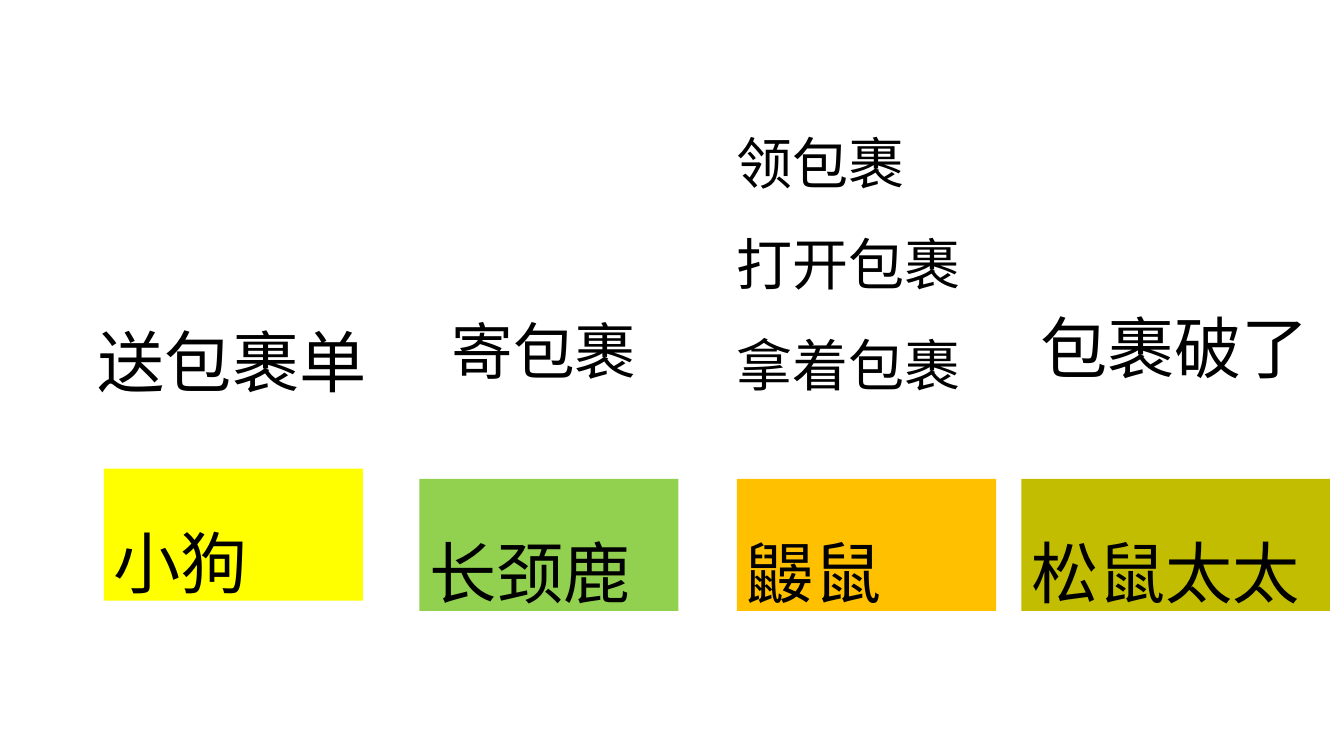
from pptx import Presentation
from pptx.dml.color import RGBColor as RGB
from pptx.enum.shapes import MSO_SHAPE as SHAPE
from pptx.enum.text import MSO_ANCHOR as ANCHOR, PP_ALIGN as ALIGN
from pptx.util import Inches, Pt
from lxml.etree import SubElement
from pptx.oxml.ns import qn

FONT = "Noto Sans CJK SC"
COLORS = {
    "text": "000000",
    "dog": "FFFF00",
    "giraffe": "92D050",
    "mole": "FFC000",
    "squirrel": "C2BD00",
}
SINGLE, WIDE = 1.2, 1.8  # line pitch as a share of the font size
CARD_H, CARD_SIZE = 1.31, 48

# animal, colour, card (left, top, width), actions, action box, size, pitch
COLUMNS = [
    ("小狗", "dog", (1.03, 4.65, 2.57),
     ["送包裹单"], (0.87, 2.65, 3.29, 1.31), 48, WIDE),
    ("长颈鹿", "giraffe", (4.16, 4.75, 2.57),
     ["寄包裹"], (4.38, 2.99, 2.2, 0.84), 44, SINGLE),
    ("鼹鼠", "mole", (7.31, 4.75, 2.57),
     ["领包裹", "打开包裹", "拿着包裹"], (7.21, 0.83, 2.78, 3.13), 40, WIDE),
    ("松鼠太太", "squirrel", (10.13, 4.75, 3.06),
     ["包裹破了"], (10.22, 2.52, 3.05, 1.31), 48, WIDE),
]


def write_lines(sp, lines, size, pitch):
    tf = sp.text_frame
    frame = {
        "word_wrap": True,
        "vertical_anchor": ANCHOR.TOP,
        "margin_top": Inches(0.05 + 0.11 * size / 72),
        "margin_bottom": 0,
    }
    for name, value in frame.items():
        setattr(tf, name, value)
    for i, line in enumerate(lines):
        p = tf.add_paragraph() if i else tf.paragraphs[0]
        p.alignment = ALIGN.LEFT
        p.line_spacing = Pt(size * pitch)
        r = p.add_run()
        r.text = line
        r.font.size = Pt(size)
        r.font.name = FONT
        r.font.color.rgb = RGB.from_string(COLORS["text"])
        SubElement(r.font._element, qn("a:ea"), typeface=FONT)


def add_actions(s, box, lines, size, pitch):
    sp = s.shapes.add_textbox(*map(Inches, box))
    write_lines(sp, lines, size, pitch)


def add_animal_card(s, box, animal, color):
    sp = s.shapes.add_shape(SHAPE.RECTANGLE, *map(Inches, box))
    sp.shadow.inherit = False
    sp.fill.solid()
    sp.fill.fore_color.rgb = RGB.from_string(COLORS[color])
    sp.line.fill.background()
    write_lines(sp, [animal], CARD_SIZE, WIDE)


def main():
    prs = Presentation()
    prs.slide_width, prs.slide_height = Inches(13.33), Inches(7.5)
    s = prs.slides.add_slide(prs.slide_layouts[6])
    for animal, color, card, actions, box, size, pitch in COLUMNS:
        add_actions(s, box, actions, size, pitch)
        add_animal_card(s, (*card, CARD_H), animal, color)
    prs.save("out.pptx")


if __name__ == "__main__":
    main()
